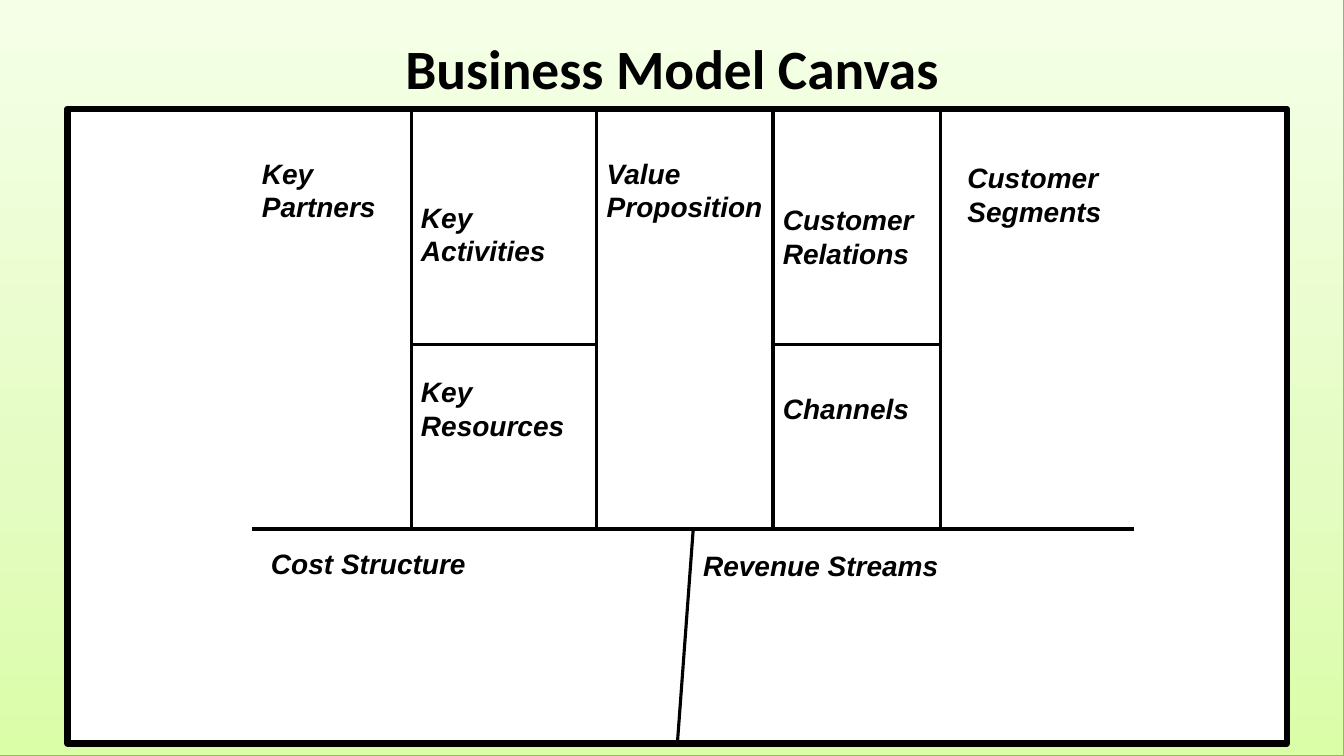
from copy import deepcopy

from pptx import Presentation
from pptx.dml.color import RGBColor
from pptx.enum.shapes import MSO_CONNECTOR, MSO_SHAPE
from pptx.enum.text import MSO_ANCHOR, MSO_AUTO_SIZE, PP_ALIGN
from pptx.oxml.ns import qn
from pptx.util import Cm, Pt
from lxml import etree

SLIDE_SIZE = (33.87, 19.05)
TITLE_BOX = (1.7, 0.76, 30.48, 1.88)
CANVAS_BOX = (1.7, 2.74, 30.73, 16)
BLACK = "000000"

# Grid positions measured from the canvas corner
GRID_LEFT, GRID_RIGHT = 4.65, 26.87
COLUMNS = (8.66, 13.34, 17.78, 22)
MIDDLE, FLOOR = 5.94, 10.59
SPLIT_TOP, SPLIT_BOTTOM = 15.77, 15.37
LINE_HEIGHT = 0.84
PADDING = 0.28

# Text, left, top, width, number of lines
LABELS = (
    ("Key Partners", GRID_LEFT, 1.07, 4.01, 2),
    ("Key Activities", COLUMNS[0], 2.18, 4.01, 2),
    ("Key Resources", COLUMNS[0], 6.58, 4.65, 2),
    ("Value Proposition", COLUMNS[1], 1.07, 4.45, 2),
    ("Customer Relations", COLUMNS[2], 2.24, 3.81, 2),
    ("Customer Segments", 22.43, 1.19, 4.45, 2),
    ("Channels", COLUMNS[2], 7.01, 3.81, 1),
    ("Cost Structure", 4.88, 10.9, 6.35, 1),
    ("Revenue Streams", SPLIT_TOP, 10.95, 6.55, 1),
)


def color(value):
    return RGBColor.from_string(value)


def add_text(slide, text, box, size, font, italic=False, align=PP_ALIGN.LEFT,
             anchor=MSO_ANCHOR.TOP, auto_size=MSO_AUTO_SIZE.NONE):
    frame = slide.shapes.add_textbox(*map(Cm, box)).text_frame
    frame.word_wrap = True
    frame.auto_size = auto_size
    frame.vertical_anchor = anchor
    paragraph = frame.paragraphs[0]
    paragraph.alignment = align
    run = paragraph.add_run()
    run.text = text
    run.font.name = font
    run.font.size = Pt(size)
    run.font.bold = True
    run.font.italic = italic
    run.font.color.rgb = color(BLACK)


def add_rectangle(slide, box, line_color, line_width):
    shape = slide.shapes.add_shape(MSO_SHAPE.RECTANGLE, *map(Cm, box))
    shape.shadow.inherit = False
    shape.line.color.rgb = color(line_color)
    shape.line.width = Pt(line_width)
    return shape


def add_line(slide, start, end):
    line = slide.shapes.add_connector(MSO_CONNECTOR.STRAIGHT, *map(Cm, start + end))
    line.line.color.rgb = color(BLACK)
    line.line.width = Pt(2.25)
    etree.SubElement(line._element.spPr, qn("a:effectLst"))


def add_backdrop(slide, box):
    """Fill the box with a green gradient that lightens upwards."""
    shape = add_rectangle(slide, box, "98B955", 0.75)
    shape.fill.gradient()
    shape.fill.gradient_angle = 90
    first_stop = shape._element.spPr.find(".//" + qn("a:gs"))
    first_stop.addnext(deepcopy(first_stop))
    stops = ((0, "DAFDA7"), (0.35, "E4FCC2"), (1, "F5FFE7"))
    for stop, (position, value) in zip(shape.fill.gradient_stops, stops):
        stop.position = position
        stop.color.rgb = color(value)


def add_canvas(slide, box):
    left, top, _, height = box
    frame = add_rectangle(slide, box, BLACK, 4.5)
    frame.fill.solid()
    frame.fill.fore_color.rgb = color("FFFFFF")

    rules = [((GRID_LEFT, FLOOR), (GRID_RIGHT, FLOOR)),
             ((SPLIT_TOP, FLOOR), (SPLIT_BOTTOM, height))]
    rules += [((x, 0), (x, FLOOR)) for x in COLUMNS]
    rules += [((COLUMNS[i], MIDDLE), (COLUMNS[i + 1], MIDDLE)) for i in (0, 2)]
    for (x1, y1), (x2, y2) in rules:
        add_line(slide, (left + x1, top + y1), (left + x2, top + y2))

    for text, x, y, width, lines in LABELS:
        label_box = (left + x, top + y, width, lines * LINE_HEIGHT + PADDING)
        add_text(slide, text, label_box, 20, "Arial", italic=True,
                 auto_size=MSO_AUTO_SIZE.SHAPE_TO_FIT_TEXT)


def main():
    presentation = Presentation()
    presentation.slide_width, presentation.slide_height = map(Cm, SLIDE_SIZE)
    slide = presentation.slides.add_slide(presentation.slide_layouts[6])
    add_backdrop(slide, (0, 0, *SLIDE_SIZE))
    add_canvas(slide, CANVAS_BOX)
    add_text(slide, "Business Model Canvas", TITLE_BOX, 39.6, "Calibri",
             align=PP_ALIGN.CENTER, anchor=MSO_ANCHOR.MIDDLE)
    presentation.save("out.pptx")


if __name__ == "__main__":
    main()
